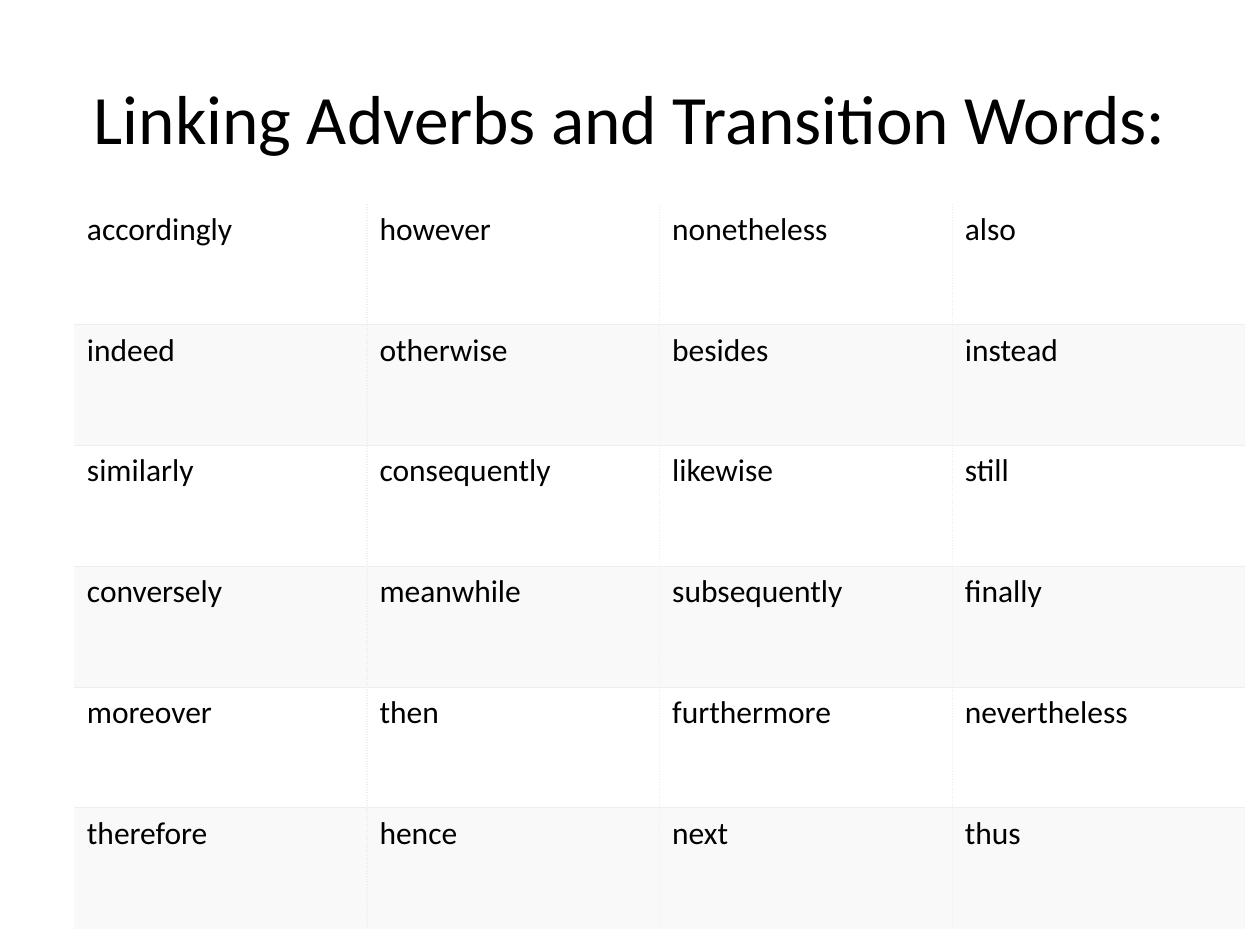
import pptx
import pptx.dml.color
import pptx.enum.text
import pptx.oxml
import pptx.oxml.ns
import pptx.util
from pptx.util import Inches

TITLE = "Linking Adverbs and Transition Words:"
WORDS = [
    ("accordingly", "however", "nonetheless", "also"),
    ("indeed", "otherwise", "besides", "instead"),
    ("similarly", "consequently", "likewise", "still"),
    ("conversely", "meanwhile", "subsequently", "finally"),
    ("moreover", "then", "furthermore", "nevertheless"),
    ("therefore", "hence", "next", "thus"),
]
ROW_FILLS = ("FFFFFF", "F9F9F9")
BORDER_COLOR = "EEEEEE"
BORDER_WIDTH = 0.75
TITLE_BOX = {"left": 0.5, "top": 0.3, "width": 9, "height": 1.25}
TABLE_BOX = {"left": 0.59, "top": 1.62, "width": 9.29, "height": 5.75}
TITLE_FONT = {"name": "Calibri", "size": pptx.util.Pt(39.6), "bold": False}
CELL_FONT = {"name": "Calibri", "size": pptx.util.Pt(18), "bold": False}


def set_color(color_format, value):
    color_format.rgb = pptx.dml.color.RGBColor.from_string(value)


def format_text(text_frame, font_values):
    for paragraph in text_frame.paragraphs:
        for run in paragraph.runs:
            for name, value in font_values.items():
                setattr(run.font, name, value)
            set_color(run.font.color, "000000")


def add_border(cell, side, dash, visible):
    fill = "<a:noFill/>"
    if visible:
        fill = (f'<a:solidFill><a:srgbClr val="{BORDER_COLOR}"/></a:solidFill>'
                f'<a:prstDash val="{dash}"/>')
    cell._tc.get_or_add_tcPr().append(pptx.oxml.parse_xml(
        f'<a:ln{side} {pptx.oxml.ns.nsdecls("a")} '
        f'w="{pptx.util.Pt(BORDER_WIDTH)}">{fill}</a:ln{side}>'))


def add_title(slide):
    title = slide.shapes.title
    for name, value in TITLE_BOX.items():
        setattr(title, name, Inches(value))
    title.text_frame.text = TITLE
    title.text_frame.vertical_anchor = pptx.enum.text.MSO_ANCHOR.MIDDLE
    title.text_frame.paragraphs[0].alignment = pptx.enum.text.PP_ALIGN.CENTER
    format_text(title.text_frame, TITLE_FONT)


def add_word_table(slide):
    row_count, column_count = len(WORDS), len(WORDS[0])
    box = {name: Inches(value) for name, value in TABLE_BOX.items()}
    table = slide.shapes.add_table(row_count, column_count, **box).table
    table.first_row = False
    table.horz_banding = False
    for row_index, words in enumerate(WORDS):
        for column_index, word in enumerate(words):
            cell = table.cell(row_index, column_index)
            cell.text = word
            format_text(cell.text_frame, CELL_FONT)
            add_border(cell, "L", "dot", column_index > 0)
            add_border(cell, "R", "dot", column_index < column_count - 1)
            add_border(cell, "T", "solid", row_index > 0)
            add_border(cell, "B", "solid", row_index < row_count - 1)
            cell.fill.solid()
            set_color(cell.fill.fore_color, ROW_FILLS[row_index % 2])


def main():
    presentation = pptx.Presentation()
    presentation.slide_width = Inches(10)
    presentation.slide_height = Inches(7.5)
    slide = presentation.slides.add_slide(presentation.slide_layouts[5])
    add_title(slide)
    add_word_table(slide)
    presentation.save("out.pptx")


if __name__ == "__main__":
    main()
